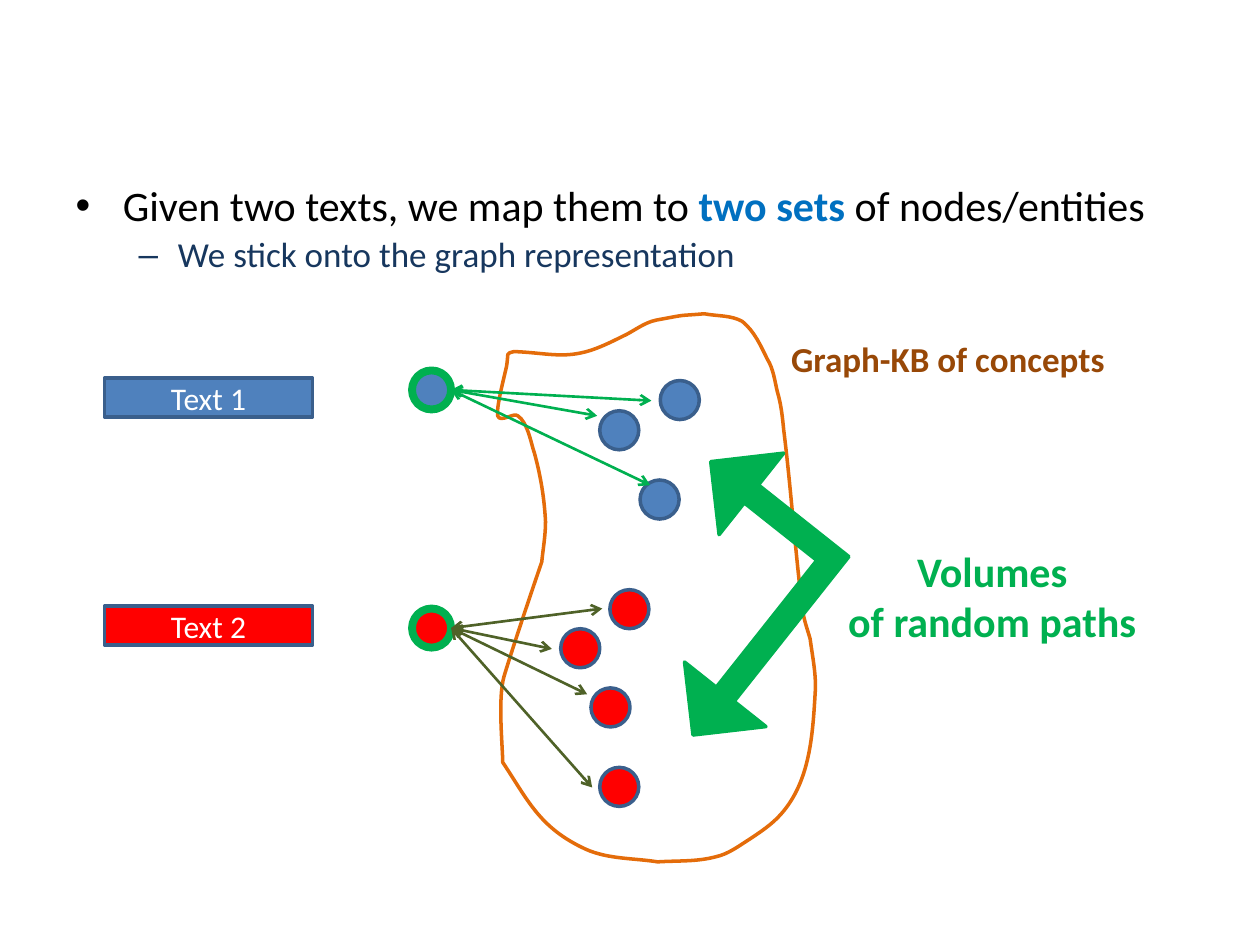
import pptx
import pptx.util
import pptx.dml.color
import pptx.enum.shapes
import pptx.enum.text
import pptx.oxml.ns
import lxml.etree

Inches = pptx.util.Inches
Pt = pptx.util.Pt
SHAPE = pptx.enum.shapes.MSO_SHAPE
ALIGN = pptx.enum.text.PP_ALIGN
qn = pptx.oxml.ns.qn

BLUE, RED, GREEN, OLIVE = "4F81BD", "FF0000", "00B050", "4F6228"
EDGE, ORANGE, BROWN = "3A5F8C", "E46C0A", "984807"
NODE = 0.31

# Content: each bullet is a level, a size and runs of (text, colour, bold)
BULLETS = [
    (0, 24, [("Given two texts, we map them to ", "000000", False),
             ("two sets", "0070C0", True),
             (" of nodes/entities", "000000", False)]),
    (1, 20, [("We stick onto the graph representation", "17375E", False)]),
]
# Each text has its box, its hub, the nodes it maps to and the arrow ends
TEXTS = [
    dict(label="Text 1", fill=BLUE, arrow=GREEN, box_top=3, hub_top=2.94,
         nodes=[(4.76, 3.26), (5.24, 3.02), (5.08, 3.81)],
         ends=[(4.74, 3.3), (5.16, 3.85), (5.17, 3.18)]),
    dict(label="Text 2", fill=RED, arrow=OLIVE, box_top=4.81, hub_top=4.83,
         nodes=[(4.45, 4.99), (4.84, 4.68), (4.69, 5.46), (4.76, 6.09)],
         ends=[(4.78, 4.83), (4.38, 5.15), (4.66, 5.51), (4.7, 6.25)]),
]
LABELS = [
    (["Volumes", "of random paths"], 24, GREEN, ALIGN.CENTER, (6.62, 4.28, 2.51, 0.91)),
    (["Graph-KB of concepts"], 20, BROWN, ALIGN.LEFT, (6.18, 2.63, 2.71, 0.44)),
]
# Outline of the graph: a start, then two control points and an end per curve
CLOUD_START = (3.95, 3.3)
CLOUD_CURVES = [
    [(3.94, 3.23), (3.99, 3.04), (4.02, 2.91)],
    [(4.04, 2.79), (4.01, 2.81), (4.08, 2.79)],
    [(4.34, 2.8), (4.47, 2.85), (4.69, 2.78)],
    [(4.78, 2.75), (4.86, 2.71), (4.94, 2.67)],
    [(5.03, 2.63), (5.11, 2.56), (5.21, 2.54)],
    [(5.48, 2.49), (5.36, 2.51), (5.59, 2.49)],
    [(5.69, 2.51), (5.8, 2.5), (5.89, 2.55)],
    [(5.99, 2.63), (6.04, 2.75), (6.09, 2.85)],
    [(6.14, 2.93), (6.15, 3.03), (6.17, 3.11)],
    [(6.2, 3.21), (6.21, 3.31), (6.22, 3.41)],
    [(6.28, 3.89), (6.31, 4.37), (6.37, 4.84)],
    [(6.38, 4.92), (6.41, 5), (6.43, 5.07)],
    [(6.45, 5.22), (6.48, 5.36), (6.47, 5.5)],
    [(6.45, 5.83), (6.43, 6.2), (6.2, 6.46)],
    [(6.13, 6.54), (6.04, 6.6), (5.95, 6.66)],
    [(5.87, 6.71), (5.78, 6.78), (5.68, 6.8)],
    [(5.53, 6.84), (5.38, 6.83), (5.22, 6.84)],
    [(5.03, 6.81), (4.83, 6.82), (4.65, 6.74)],
    [(4.28, 6.57), (4.19, 6.35), (3.99, 6.05)],
    [(3.99, 5.93), (3.95, 5.55), (4, 5.37)],
    [(4.09, 5.07), (4.3, 4.46), (4.3, 4.46)],
    [(4.31, 4.36), (4.33, 4.25), (4.33, 4.14)],
    [(4.32, 3.95), (4.29, 3.77), (4.24, 3.59)],
    [(4.22, 3.54), (4.19, 3.35), (4.11, 3.3)],
    [(4.08, 3.27), (3.97, 3.36), (3.95, 3.3)],
]


def rgb(code):
    return pptx.dml.color.RGBColor.from_string(code)


def add_run(para, text, size, color, bold=False):
    span = para.add_run()
    span.text = text
    span.font.name = "Calibri"
    span.font.size = Pt(size)
    span.font.bold = bold
    span.font.color.rgb = rgb(color)


def paint(shape, fill, line, width):
    shape.shadow.inherit = False
    if fill:
        shape.fill.solid()
        shape.fill.fore_color.rgb = rgb(fill)
    else:
        shape.fill.background()
    shape.line.color.rgb = rgb(line)
    shape.line.width = Pt(width)


def add_shape(page, kind, place, fill, line=EDGE, width=2):
    shape = page.shapes.add_shape(kind, *map(Inches, place))
    paint(shape, fill, line, width)
    return shape


def add_arrow(page, start, end, color):
    arrow = page.shapes.add_connector(
        pptx.enum.shapes.MSO_CONNECTOR.STRAIGHT, *map(Inches, start + end))
    arrow.line.color.rgb = rgb(color)
    arrow.line.width = Pt(1.5)
    line = arrow.line._get_or_add_ln()
    for tag in ("a:headEnd", "a:tailEnd"):
        lxml.etree.SubElement(line, qn(tag), type="arrow")
    lxml.etree.SubElement(arrow._element.spPr, qn("a:effectLst"))


def add_cloud(page):
    # The builder rounds to whole units, so points are given as lengths
    builder = page.shapes.build_freeform(*map(Inches, CLOUD_START))
    points = [tuple(map(Inches, point)) for curve in CLOUD_CURVES for point in curve]
    builder.add_line_segments(points, close=True)
    cloud = builder.convert_to_shape()
    # Turn every three straight segments into one Bézier curve
    segments = list(cloud._element.iter(qn("a:lnTo")))
    for first in range(0, len(points), 3):
        curve = lxml.etree.Element(qn("a:cubicBezTo"))
        segments[first].addprevious(curve)
        for segment in segments[first:first + 3]:
            curve.append(segment[0])
            segment.getparent().remove(segment)
    paint(cloud, None, ORANGE, 2)


def add_label(page, lines, size, color, align, place):
    box = page.shapes.add_textbox(*map(Inches, place))
    frame = box.text_frame
    frame.word_wrap = False
    for number, text in enumerate(lines):
        para = frame.add_paragraph() if number else frame.paragraphs[0]
        para.alignment = align
        add_run(para, text, size, color, True)


def main():
    deck = pptx.Presentation()
    deck.slide_width, deck.slide_height = Inches(10), Inches(7.5)
    page = deck.slides.add_slide(deck.slide_layouts[1])
    title = page.shapes.title._element
    title.getparent().remove(title)

    # Bullets
    body = page.placeholders[1]
    body.left, body.top, body.width, body.height = map(Inches, (0.5, 1.42, 9, 1.15))
    frame = body.text_frame
    frame.auto_size = pptx.enum.text.MSO_AUTO_SIZE.NONE
    for number, (level, size, runs) in enumerate(BULLETS):
        para = frame.add_paragraph() if number else frame.paragraphs[0]
        para.level = level
        para.line_spacing = 0.9
        for text, color, bold in runs:
            add_run(para, text, size, color, bold)

    # Text boxes and their nodes
    for item in TEXTS:
        box = add_shape(page, SHAPE.RECTANGLE, (0.83, item["box_top"], 1.65, NODE), item["fill"])
        box.text_frame.vertical_anchor = pptx.enum.text.MSO_ANCHOR.MIDDLE
        para = box.text_frame.paragraphs[0]
        para.alignment = ALIGN.CENTER
        add_run(para, item["label"], 18, "FFFFFF")
        for left, top in item["nodes"]:
            add_shape(page, SHAPE.OVAL, (left, top, NODE, NODE), item["fill"])

    add_cloud(page)

    # Hubs with an arrow to each node
    for item in TEXTS:
        left, top = 3.27, item["hub_top"]
        add_shape(page, SHAPE.OVAL, (left, top, NODE, NODE), item["fill"], GREEN, 4.5)
        for end in item["ends"]:
            add_arrow(page, (left + NODE, top + NODE / 2), end, item["arrow"])

    # Double arrow between the two sets, and the labels
    paths = add_shape(page, SHAPE.LEFT_UP_ARROW, (4.76, 3.89, 2.2, 1.65), GREEN, GREEN)
    paths.rotation = 308.4
    for index, value in enumerate((0.11, 0.25, 0.25)):
        paths.adjustments[index] = value
    for label in LABELS:
        add_label(page, *label)

    deck.save("out.pptx")


if __name__ == "__main__":
    main()
